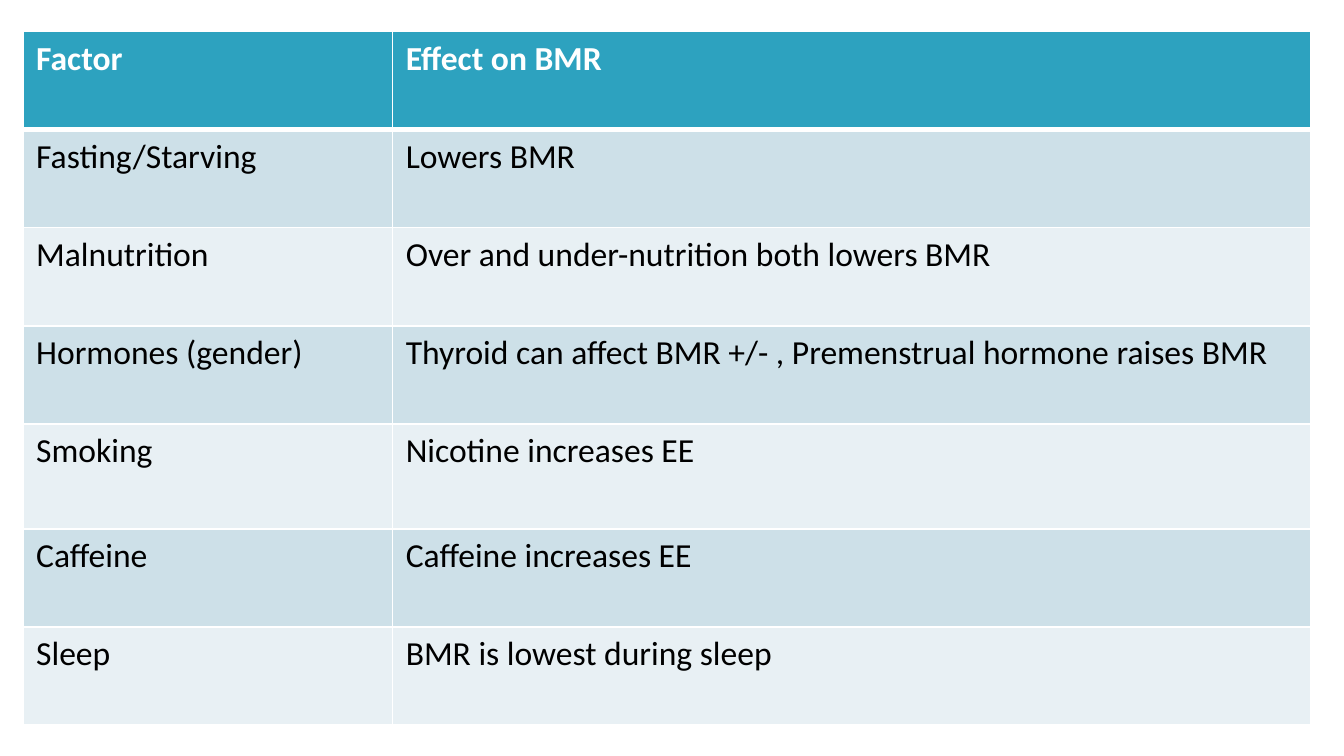
from lxml import etree
from pptx import Presentation
from pptx.dml.color import RGBColor
from pptx.oxml.ns import qn
from pptx.util import Pt

ROWS = [
    ("Factor", "Effect on BMR"),
    ("Fasting/Starving", "Lowers BMR"),
    ("Malnutrition", "Over and under-nutrition both lowers BMR"),
    ("Hormones (gender)", "Thyroid can affect BMR +/- , Premenstrual hormone raises BMR"),
    ("Smoking", "Nicotine increases EE"),
    ("Caffeine", "Caffeine increases EE"),
    ("Sleep", "BMR is lowest during sleep"),
]
WIDTHS = (198, 492)
HEIGHT, TALL = 52.6, 56.2
TALL_ROW = 4
LEFT, TOP = 12.2, 16.8
HEAD, BANDS = "2DA2BF", ("E8F0F4", "CDE0E8")
WHITE, BLACK = "FFFFFF", "000000"


def paint(target, color):
    """Give a fill or a font a solid colour."""
    if hasattr(target, "solid"):
        target.solid()
        target.fore_color.rgb = RGBColor.from_string(color)
    else:
        target.color.rgb = RGBColor.from_string(color)


def edge(cell, side, width):
    line = etree.SubElement(cell._tc.get_or_add_tcPr(), qn("a:ln" + side), w=str(Pt(width)))
    fill = etree.SubElement(line, qn("a:solidFill"))
    etree.SubElement(fill, qn("a:srgbClr"), val=WHITE)


deck = Presentation()
deck.slide_width, deck.slide_height = Pt(720), Pt(405)
slide = deck.slides.add_slide(deck.slide_layouts[6])

heights = [TALL if r == TALL_ROW else HEIGHT for r in range(len(ROWS))]
table = slide.shapes.add_table(len(ROWS), len(WIDTHS), Pt(LEFT), Pt(TOP),
                               Pt(sum(WIDTHS)), Pt(sum(heights))).table
for col, width in zip(table.columns, WIDTHS):
    col.width = Pt(width)

for r, (texts, height) in enumerate(zip(ROWS, heights)):
    table.rows[r].height = Pt(height)
    head = r == 0
    for c, text in enumerate(texts):
        cell = table.cell(r, c)
        cell.text = text
        # The rule under the heading is heavier than the others
        for side, width in (("L", 1), ("R", 1), ("T", 3 if r == 1 else 1), ("B", 3 if head else 1)):
            edge(cell, side, width)
        paint(cell.fill, HEAD if head else BANDS[r % 2])
        font = cell.text_frame.paragraphs[0].font
        font.name, font.size, font.bold = "Calibri", Pt(18), head
        paint(font, WHITE if head else BLACK)

deck.save("out.pptx")
